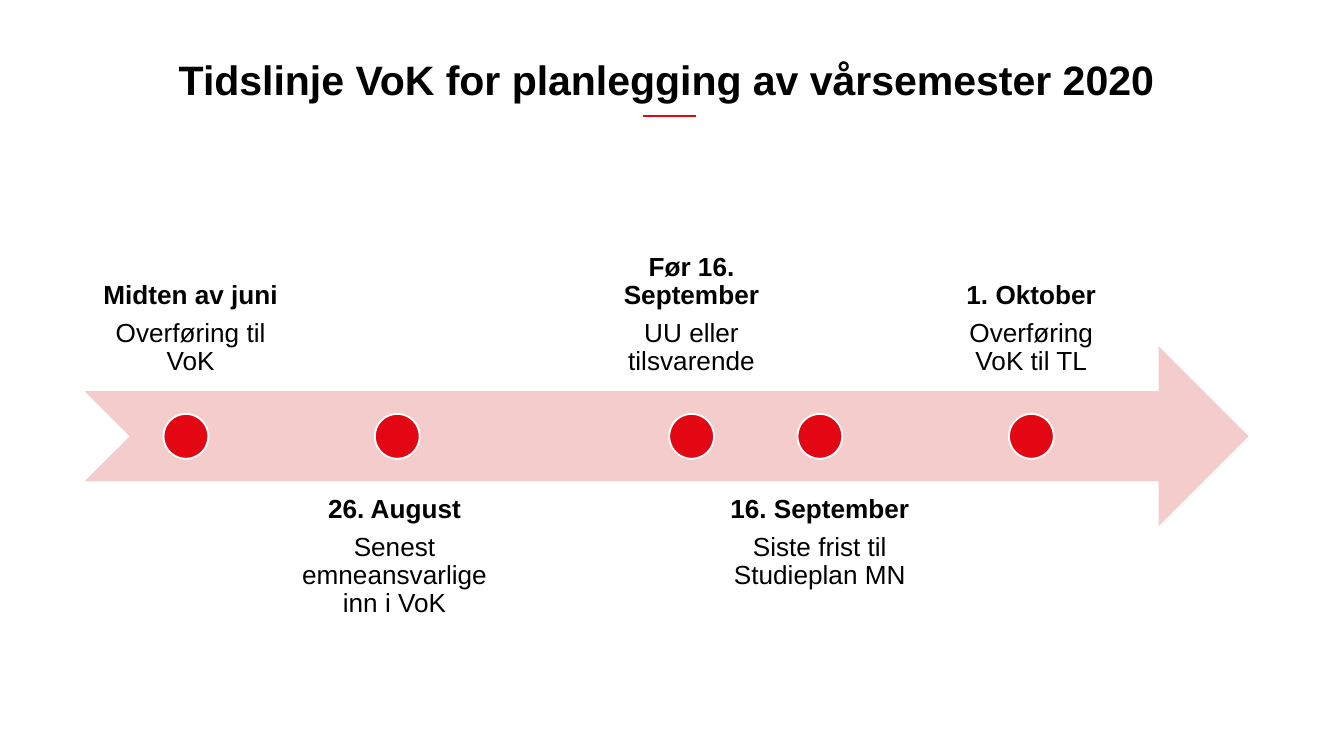
from lxml import etree
from pptx import Presentation
from pptx.dml.color import RGBColor
from pptx.enum import shapes, text
from pptx.oxml import ns
from pptx.util import Pt

RED = RGBColor(0xE3, 0x06, 0x13)
PINK = RGBColor(0xF4, 0xCC, 0xCC)
BLACK = RGBColor(0, 0, 0)
WHITE = RGBColor(0xFF, 0xFF, 0xFF)

DOT_SIZE = 24
LABEL_HEIGHT = 105
LABEL_INSET = 7.9

# dot centre, label centre, label width, above the arrow, date, task
MILESTONES = [
    (54.2, 56.8, 113, True, "Midten av juni", "Overføring til VoK"),
    (167.4, 166, 117.4, False, "26. August", "Senest emneansvarlige inn i VoK"),
    (325.1, 325.1, 108, True, "Før 16. September", "UU eller tilsvarende"),
    (393.8, 393.8, 135.4, False, "16. September", "Siste frist til Studieplan MN"),
    (507.1, 507.1, 108, True, "1. Oktober", "Overføring VoK til TL"),
]


def add_text(slide, box, lines, *, size, anchor, inset=0, spacing=1.0, after=0):
    frame = slide.shapes.add_textbox(*map(Pt, box)).text_frame
    frame.word_wrap = True
    frame.vertical_anchor = anchor
    frame.margin_left = frame.margin_right = Pt(inset)
    frame.margin_top = frame.margin_bottom = Pt(inset)
    for index, (wording, bold) in enumerate(lines):
        paragraph = frame.add_paragraph() if index else frame.paragraphs[0]
        paragraph.alignment = text.PP_ALIGN.CENTER
        paragraph.line_spacing = spacing
        paragraph.space_after = Pt(after)
        run = paragraph.add_run()
        run.text = wording
        run.font.name = "Arial"
        run.font.size = Pt(size)
        run.font.bold = bold
        run.font.color.rgb = BLACK


def add_solid(slide, kind, box, fill, outline=None):
    solid = slide.shapes.add_shape(kind, *map(Pt, box))
    solid.shadow.inherit = False
    solid.fill.solid()
    solid.fill.fore_color.rgb = fill
    if outline is None:
        solid.line.fill.background()
    else:
        solid.line.color.rgb = outline
        solid.line.width = Pt(1)


def add_heading(slide, box):
    left, top, width, height = box
    rule_left, rule_y = left + 299, top + height + 0.4
    rule = slide.shapes.add_connector(
        shapes.MSO_CONNECTOR.STRAIGHT,
        Pt(rule_left), Pt(rule_y), Pt(rule_left + 28.5), Pt(rule_y))
    rule.line.color.rgb = RED
    rule.line.width = Pt(1)
    etree.SubElement(rule._element.spPr, ns.qn("a:effectLst"))
    add_text(slide, box, [("Tidslinje VoK for planlegging av vårsemester 2020", True)],
             size=22, anchor=text.MSO_ANCHOR.MIDDLE)


def add_timeline(slide, box):
    left, top, width, height = box
    add_solid(slide, shapes.MSO_SHAPE.NOTCHED_RIGHT_ARROW, box, PINK)
    dot_top = top + (height - DOT_SIZE) / 2
    for dot_x, label_x, label_width, above, date, task in MILESTONES:
        label_top = top + height / 4 - LABEL_HEIGHT if above else top + height * 3 / 4
        add_text(slide, (left + label_x - label_width / 2, label_top, label_width, LABEL_HEIGHT),
                 [(date, True), (task, False)], size=14, inset=LABEL_INSET,
                 anchor=text.MSO_ANCHOR.BOTTOM if above else text.MSO_ANCHOR.TOP,
                 spacing=0.9, after=5)
        add_solid(slide, shapes.MSO_SHAPE.OVAL,
                  (left + dot_x - DOT_SIZE / 2, dot_top, DOT_SIZE, DOT_SIZE), RED, WHITE)


def main():
    deck = Presentation()
    deck.slide_width, deck.slide_height = Pt(720), Pt(405)
    slide = deck.slides.add_slide(deck.slide_layouts[6])
    add_heading(slide, (45.4, 23, 623.5, 38.9))
    add_timeline(slide, (45.4, 185.5, 623.5, 96.5))
    deck.save("out.pptx")


if __name__ == "__main__":
    main()
